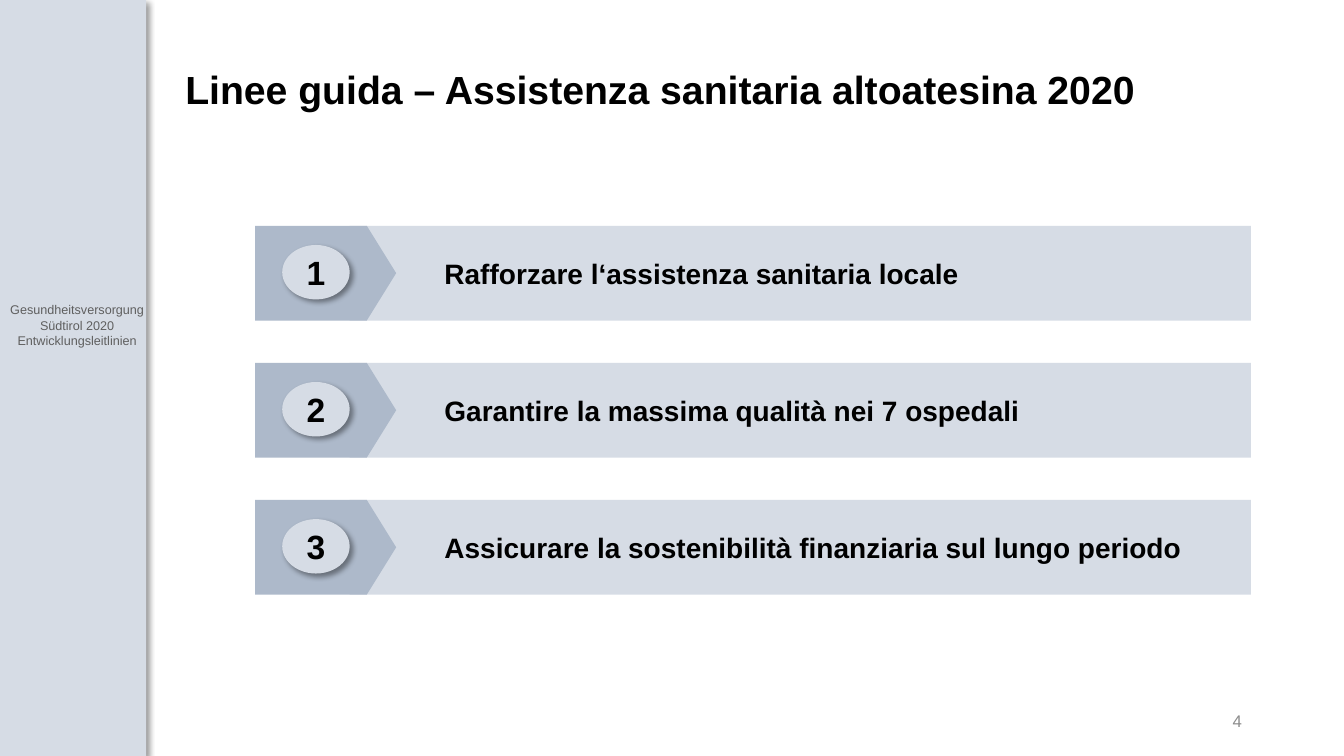
from dataclasses import dataclass

from lxml.etree import SubElement
from pptx import Presentation
from pptx.dml.color import RGBColor
from pptx.enum.shapes import MSO_SHAPE as Preset
from pptx.enum.text import MSO_ANCHOR as Anchor, PP_ALIGN as Align
from pptx.oxml.ns import qn
from pptx.util import Pt


@dataclass(frozen=True)
class Theme:
    font: str = "Arial"
    panel: str = "D6DCE5"
    marker: str = "ADB9CA"
    ink: str = "000000"
    sidebar_ink: str = "5F5F5F"
    number_ink: str = "8C8C8C"
    title_size: float = 28
    badge_size: float = 24
    bar_size: float = 20
    number_size: float = 12
    sidebar_size: float = 9


@dataclass(frozen=True)
class Box:
    left: float
    top: float
    width: float
    height: float

    def moved_down(self, distance: float):
        return Box(self.left, self.top + distance, self.width, self.height)

    def lengths(self):
        return Pt(self.left), Pt(self.top), Pt(self.width), Pt(self.height)


THEME = Theme()
ROW_PITCH = 97.9
BAR = Box(249.8, 161.3, 643.7, 67.7)
MARKER = Box(182.2, 161.3, 100.8, 67.7)
BADGE = Box(201.6, 175, 48.2, 38.9)
GUIDELINES = (
    "Rafforzare l‘assistenza sanitaria locale",
    "Garantire la massima qualità nei 7 ospedali",
    "Assicurare la sostenibilità finanziaria sul lungo periodo",
)


def write(shape, text: str, *, size: float, color: str = THEME.ink, bold: bool = False,
          align=Align.LEFT, anchor=Anchor.MIDDLE, left_inset: float = 7.2,
          line_spacing: float = 1.0) -> None:
    frame = shape.text_frame
    frame.word_wrap = True
    frame.vertical_anchor = anchor
    frame.margin_left = Pt(left_inset)
    frame.text = text
    for paragraph in frame.paragraphs:
        paragraph.alignment = align
        paragraph.line_spacing = line_spacing
        for run in paragraph.runs:
            run.font.name = THEME.font
            run.font.size = Pt(size)
            run.font.bold = bold
            run.font.color.rgb = RGBColor.from_string(color)


def add_text(slide, box: Box, text: str, **style) -> None:
    write(slide.shapes.add_textbox(*box.lengths()), text, **style)


def add_shadow(shape) -> None:
    effects = shape.element.spPr.find(qn("a:effectLst"))
    shadow = SubElement(effects, qn("a:outerShdw"), blurRad=str(Pt(4)), dist=str(Pt(3)),
                        dir="2700000", algn="tl", rotWithShape="0")
    color = SubElement(shadow, qn("a:srgbClr"), val=THEME.ink)
    SubElement(color, qn("a:alpha"), val="40000")


def add_panel(slide, preset, box: Box, fill: str, *, point: float | None = None,
              shadow: bool = False):
    shape = slide.shapes.add_shape(preset, *box.lengths())
    shape.shadow.inherit = False
    shape.fill.solid()
    shape.fill.fore_color.rgb = RGBColor.from_string(fill)
    shape.line.fill.background()
    if point is not None:
        shape.adjustments[0] = point
    if shadow:
        add_shadow(shape)
    return shape


def add_guideline(slide, index: int, text: str) -> None:
    offset = index * ROW_PITCH
    bar = add_panel(slide, Preset.PENTAGON, BAR.moved_down(offset), THEME.panel, point=0)
    write(bar, text, size=THEME.bar_size, bold=True, left_inset=67.7)
    add_panel(slide, Preset.PENTAGON, MARKER.moved_down(offset), THEME.marker, point=0.31)
    badge = add_panel(slide, Preset.OVAL, BADGE.moved_down(offset), THEME.panel, shadow=True)
    write(badge, str(index + 1), size=THEME.badge_size, bold=True, align=Align.CENTER)


def main() -> None:
    presentation = Presentation()
    presentation.slide_width, presentation.slide_height = Pt(960), Pt(540)
    slide = presentation.slides.add_slide(presentation.slide_layouts[6])

    add_panel(slide, Preset.RECTANGLE, Box(0, 0, 104.4, 540), THEME.panel, shadow=True)
    add_text(slide, Box(0, 212.4, 110.2, 50.4),
             "Gesundheitsversorgung Südtirol 2020\nEntwicklungsleitlinien",
             size=THEME.sidebar_size, color=THEME.sidebar_ink,
             align=Align.CENTER, anchor=Anchor.TOP)
    add_text(slide, Box(125.3, 28.8, 804.2, 74.2),
             "Linee guida – Assistenza sanitaria altoatesina 2020",
             size=THEME.title_size, bold=True, line_spacing=0.9)
    for index, text in enumerate(GUIDELINES):
        add_guideline(slide, index, text)
    add_text(slide, Box(678.2, 500.4, 216, 28.8), "4", size=THEME.number_size,
             color=THEME.number_ink, align=Align.RIGHT)

    presentation.save("out.pptx")


if __name__ == "__main__":
    main()
